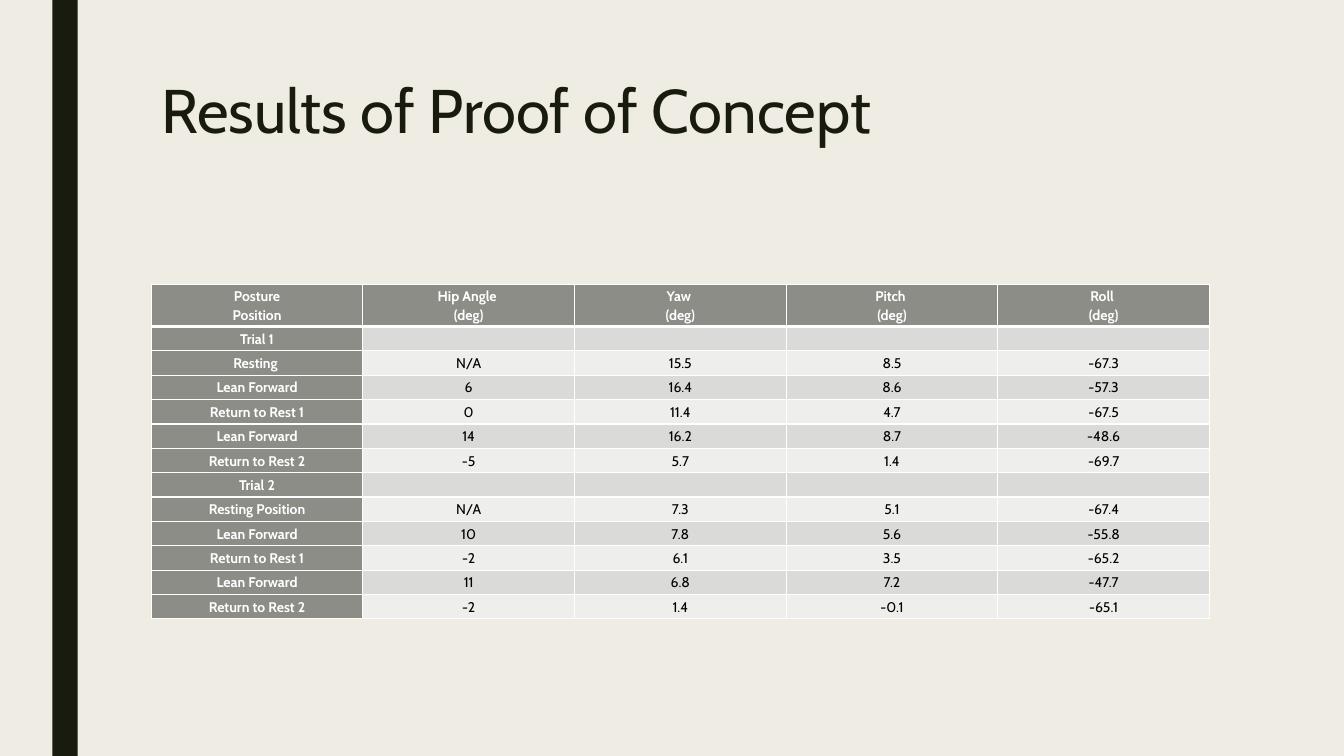
from lxml import etree
from pptx import Presentation
from pptx.dml.color import RGBColor
from pptx.enum import shapes, text
from pptx.oxml import ns
from pptx.util import Cm, Pt

TITLE = "Results of Proof of Concept"
HEADER = ["Posture\nPosition", "Hip Angle \n(deg)", "Yaw \n(deg)", "Pitch \n(deg)", "Roll \n(deg)"]
TRIALS = {
    "Trial 1": [
        ("Resting ", "N/A", "15.5", "8.5", "-67.3"),
        ("Lean Forward", "6", "16.4", "8.6", "-57.3"),
        ("Return to Rest 1", "0", "11.4", "4.7", "-67.5"),
        ("Lean Forward", "14", "16.2", "8.7", "-48.6"),
        ("Return to Rest 2", "-5", "5.7", "1.4", "-69.7"),
    ],
    "Trial 2": [
        ("Resting Position", "N/A", "7.3", "5.1", "-67.4"),
        ("Lean Forward", "10", "7.8", "5.6", "-55.8"),
        ("Return to Rest 1", "-2", "6.1", "3.5", "-65.2"),
        ("Lean Forward", "11", "6.8", "7.2", "-47.7"),
        ("Return to Rest 2", "-2", "1.4", "-0.1", "-65.1"),
    ],
}

THEME = {
    "font": "Cabin", "title_size": 44, "table_size": 10,
    "background": "EFEDE3", "dark": "191B0E", "heading": "8C8D86",
    "bands": ("EEEEED", "DADBD9"), "border": "FFFFFF",
    "heading_text": "FFFFFF", "body_text": "000000",
}

WIDTH, HEIGHT = Cm(33.87), Cm(19.05)
LEFT, CONTENT_WIDTH = Cm(3.81), Cm(26.67)
TITLE_TOP, TITLE_HEIGHT = Cm(1.91), Cm(4.11)
TABLE_TOP, HEADER_HEIGHT, ROW_HEIGHT = Cm(7.16), Cm(1.06), Cm(0.6)
BAR_LEFT, BAR_WIDTH = Cm(1.32), Cm(0.64)
CELL_FORMAT = {
    "margin_left": Cm(0.08), "margin_right": Cm(0.08),
    "margin_top": Cm(0.08), "margin_bottom": Cm(0.08),
    "vertical_anchor": text.MSO_ANCHOR.BOTTOM,
}


def paint(fill, color):
    fill.solid()
    fill.fore_color.rgb = RGBColor.from_string(color)


def write(p, content, size, color, bold, spacing):
    p.line_spacing = spacing
    r = p.add_run()
    r.text = content
    for name, value in {"name": THEME["font"], "size": Pt(size), "bold": bold}.items():
        setattr(r.font, name, value)
    r.font.color.rgb = RGBColor.from_string(color)


def set_borders(cell, widths):
    """Draw the cell's sides; widths maps L, R, T and B to points."""
    tc_pr = cell._tc.get_or_add_tcPr()
    for side, width in widths.items():
        ln = etree.SubElement(tc_pr, ns.qn(f"a:ln{side}"), w=str(Pt(width)))
        fill = etree.SubElement(ln, ns.qn("a:solidFill"))
        etree.SubElement(fill, ns.qn("a:srgbClr"), val=THEME["border"])


def fill_cell(cell, content, row, col):
    heading = row == 0 or col == 0
    for name, value in CELL_FORMAT.items():
        setattr(cell, name, value)
    set_borders(cell, {"L": 1, "R": 1, "T": 3 if row == 1 else 1, "B": 3 if row == 0 else 1})
    paint(cell.fill, THEME["heading"] if heading else THEME["bands"][row % 2])
    tf = cell.text_frame
    if not content:
        # An empty cell keeps the small type size so its row stays low.
        etree.SubElement(tf.paragraphs[0]._p, ns.qn("a:endParaRPr"),
                         sz=str(THEME["table_size"] * 100))
        return
    color = THEME["heading_text" if heading else "body_text"]
    for i, line in enumerate(content.split("\n")):
        p = tf.add_paragraph() if i else tf.paragraphs[0]
        p.alignment = text.PP_ALIGN.CENTER
        write(p, line, THEME["table_size"], color, heading, 1.07)


def add_results(slide):
    rows = [HEADER]
    for trial, readings in TRIALS.items():
        rows += [(trial, "", "", "", ""), *readings]
    height = HEADER_HEIGHT + ROW_HEIGHT * (len(rows) - 1)
    table = slide.shapes.add_table(len(rows), len(HEADER), LEFT, TABLE_TOP,
                                   CONTENT_WIDTH, height).table
    for row, values in enumerate(rows):
        table.rows[row].height = ROW_HEIGHT if row else HEADER_HEIGHT
        for col, content in enumerate(values):
            fill_cell(table.cell(row, col), content, row, col)


def main():
    prs = Presentation()
    prs.slide_width, prs.slide_height = WIDTH, HEIGHT
    slide = prs.slides.add_slide(prs.slide_layouts[6])
    paint(slide.background.fill, THEME["background"])

    bar = slide.shapes.add_shape(shapes.MSO_SHAPE.RECTANGLE, BAR_LEFT, 0, BAR_WIDTH, HEIGHT)
    bar.shadow.inherit = False
    paint(bar.fill, THEME["dark"])
    bar.line.fill.background()

    title = slide.shapes.add_textbox(LEFT, TITLE_TOP, CONTENT_WIDTH, TITLE_HEIGHT)
    tf = title.text_frame
    tf.word_wrap = True
    write(tf.paragraphs[0], TITLE, THEME["title_size"], THEME["dark"], False, 0.89)

    add_results(slide)
    prs.save("out.pptx")


if __name__ == "__main__":
    main()
